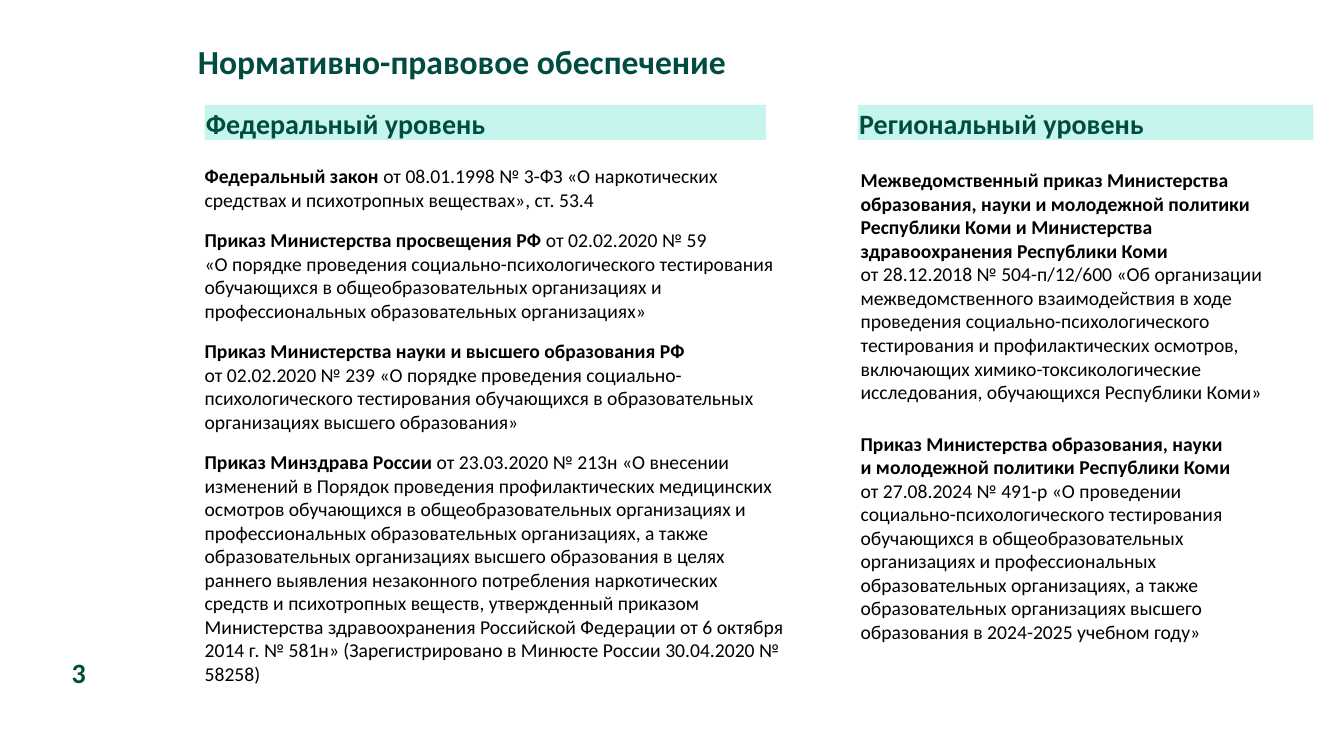
from pptx import Presentation
from pptx.dml.color import RGBColor
from pptx.enum.shapes import MSO_SHAPE
from pptx.enum.text import MSO_ANCHOR, MSO_AUTO_SIZE, PP_ALIGN
from pptx.util import Pt

RECT = MSO_SHAPE.RECTANGLE
TOP, MIDDLE = MSO_ANCHOR.TOP, MSO_ANCHOR.MIDDLE
FIXED = MSO_AUTO_SIZE.NONE
LEFT = PP_ALIGN.LEFT

# Content: each act is a bold name and its plain details
TITLE = "Нормативно-правовое обеспечение"
NUMBER = "3"
FEDERAL = [
    ("Федеральный закон ",
     "от 08.01.1998 № 3-ФЗ «О наркотических средствах и психотропных веществах», ст. 53.4"),
    ("Приказ Министерства просвещения РФ ",
     "от 02.02.2020 № 59\n«О порядке проведения социально-психологического тестирования "
     "обучающихся в общеобразовательных организациях и профессиональных "
     "образовательных организациях»"),
    ("Приказ Министерства науки и высшего образования РФ\n",
     "от 02.02.2020 № 239 «О порядке проведения социально-психологического тестирования "
     "обучающихся в образовательных организациях высшего образования»"),
    ("Приказ Минздрава России ",
     "от 23.03.2020 № 213н «О внесении изменений в Порядок проведения профилактических "
     "медицинских осмотров обучающихся в общеобразовательных организациях и "
     "профессиональных образовательных организациях, а также образовательных "
     "организациях высшего образования в целях раннего выявления незаконного "
     "потребления наркотических средств и психотропных веществ, утвержденный приказом "
     "Министерства здравоохранения Российской Федерации от 6 октября 2014 г. № 581н» "
     "(Зарегистрировано в Минюсте России 30.04.2020 № 58258)"),
]
REGION = [
    ("Межведомственный приказ Министерства образования, науки и молодежной политики "
     "Республики Коми и Министерства здравоохранения Республики Коми\n",
     "от 28.12.2018 № 504-п/12/600 «Об организации межведомственного взаимодействия "
     "в ходе проведения социально-психологического тестирования и профилактических "
     "осмотров, включающих химико-токсикологические исследования, обучающихся "
     "Республики Коми»"),
    ("Приказ Министерства образования, науки\nи молодежной политики Республики Коми\n",
     "от 27.08.2024 № 491-р «О проведении социально-психологического тестирования "
     "обучающихся в общеобразовательных организациях и профессиональных "
     "образовательных организациях, а также образовательных организациях высшего "
     "образования в 2024-2025 учебном году»"),
]
# Heading, acts, band left and width, text left and width, insets, gap after act
COLUMNS = [
    ("Федеральный уровень", FEDERAL, 146.2, 401, 146.2, 415.4, (0, 0.7, 0, 0), 12),
    ("Региональный уровень", REGION, 612.7, 325.4, 607.7, 311.8, (7.2, 3.6, 7.2, 3.6), 20),
]
FONT, GREEN, MINT, BLACK = "Calibri", "004D40", "C6F5ED", "000000"
BAND_TOP, BAND_H = 74.9, 25.2
TEXT_TOP, TEXT_H = 116.6, 359
HEAD_IN = (0.9, 0.7, 0, 0)


def color(code):
    return RGBColor.from_string(code)


def setup(shape, inset, anchor):
    frame = shape.text_frame
    frame.word_wrap = True
    frame.auto_size = FIXED
    frame.vertical_anchor = anchor
    (frame.margin_left, frame.margin_top,
     frame.margin_right, frame.margin_bottom) = map(Pt, inset)
    return frame


def add_run(para, text, size, code, bold):
    for row, line in enumerate(text.split("\n")):
        if row:
            para.add_line_break()
        if line:
            run = para.add_run()
            run.text = line
            font = run.font
            font.name, font.size, font.bold = FONT, Pt(size), bold
            font.color.rgb = color(code)


def add_head(shape, text, size, inset=HEAD_IN, anchor=MIDDLE):
    para = setup(shape, inset, anchor).paragraphs[0]
    para.alignment = LEFT
    add_run(para, text, size, GREEN, True)


deck = Presentation()
deck.slide_width, deck.slide_height = Pt(960), Pt(540)
slide = deck.slides.add_slide(deck.slide_layouts[5])
shapes = slide.shapes

# Title
title = shapes.title
title.left, title.top, title.width, title.height = map(Pt, (140.4, 28.1, 478.1, 30.2))
add_head(title, TITLE, 24)

# Two columns: band with heading, list of acts below
for head, acts, band_x, band_w, text_x, text_w, inset, gap in COLUMNS:
    band = shapes.add_shape(RECT, Pt(band_x), Pt(BAND_TOP), Pt(band_w), Pt(BAND_H))
    band.shadow.inherit = False
    band.fill.solid()
    band.fill.fore_color.rgb = color(MINT)
    band.line.fill.background()
    add_head(band, head, 20)

    box = shapes.add_textbox(Pt(text_x), Pt(TEXT_TOP), Pt(text_w), Pt(TEXT_H))
    frame = setup(box, inset, TOP)
    for row, (name, details) in enumerate(acts):
        para = frame.add_paragraph() if row else frame.paragraphs[0]
        para.space_after = Pt(gap)
        add_run(para, name, 14, BLACK, True)
        add_run(para, details, 14, BLACK, False)

# Slide number
box = shapes.add_textbox(Pt(48.2), Pt(468), Pt(30.2), Pt(24.5))
add_head(box, NUMBER, 20, (2.9, 0, 0, 0), TOP)

deck.save("out.pptx")
